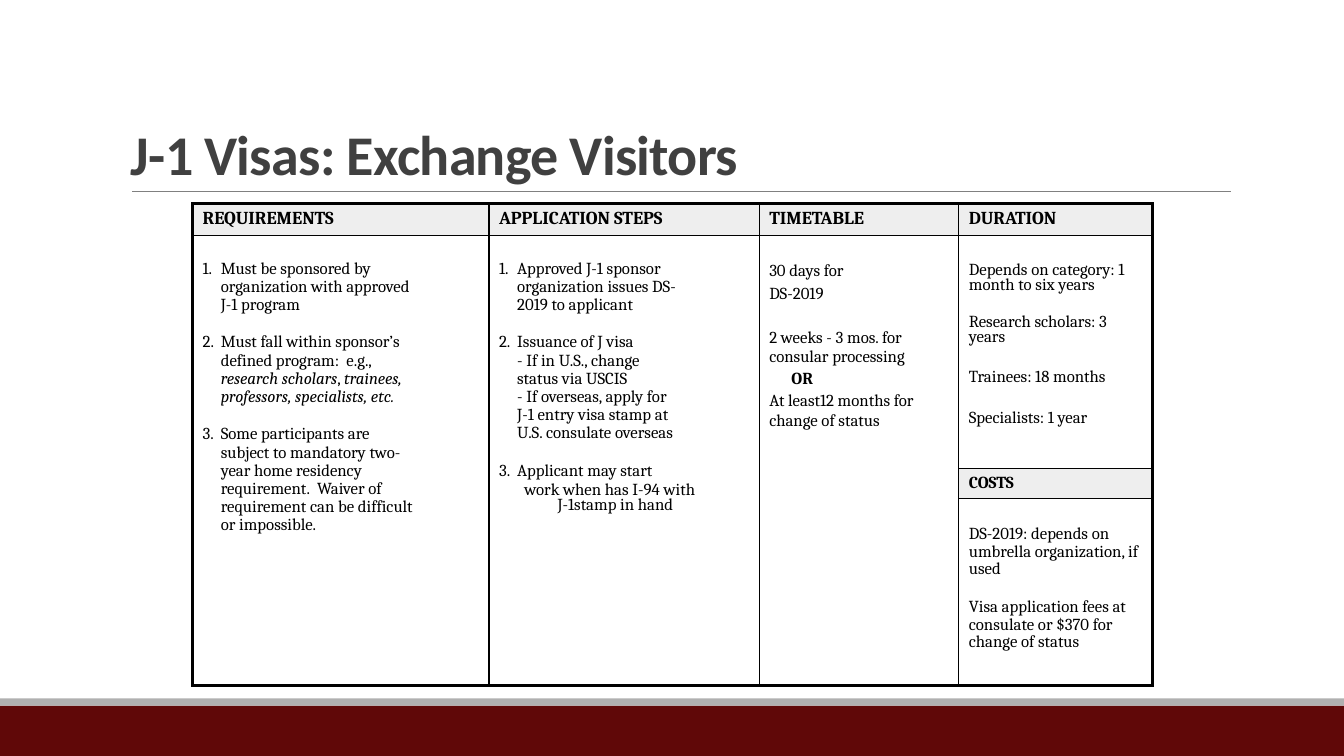
from lxml import etree
from pptx import Presentation
from pptx.dml.color import RGBColor
from pptx.enum.shapes import MSO_CONNECTOR, MSO_SHAPE
from pptx.enum.text import MSO_ANCHOR
from pptx.oxml.ns import qn
from pptx.util import Inches, Pt

MAROON = RGBColor(0x60, 0x08, 0x08)
SILVER = RGBColor(0xB0, 0xB0, 0xB0)
RULE_GRAY = RGBColor(0x80, 0x80, 0x80)
TITLE_GRAY = RGBColor(0x40, 0x40, 0x40)
HEADER_GRAY = RGBColor(0xEE, 0xEE, 0xEE)
WHITE = RGBColor(0xFF, 0xFF, 0xFF)
BLACK = RGBColor(0x00, 0x00, 0x00)

TITLE = "J-1 Visas: Exchange Visitors"
HEADERS = ["REQUIREMENTS", "APPLICATION STEPS", "TIMETABLE", "DURATION"]
COL_WIDTHS = [2.94, 2.68, 1.98, 1.92]
ROW_HEIGHTS = [0.3, 2.31, 0.3, 1.85]
THIN, THICK = 1, 2.25

# Paragraph: text or list of (text, style), then line spacing, space before (pt),
# left margin (in), first-line indent (in), numbered
STEP = (0.94, 13.7, 0.18, -0.18, True)
REQUIREMENTS = [
    ("Must be sponsored by\norganization with approved\nJ-1 program", *STEP),
    ([("Must fall within sponsor’s\ndefined program:  e.g.,\n", ""),
      ("research scholars", "i"), (", ", ""),
      ("trainees,\nprofessors, specialists, etc.", "i")], *STEP),
    ("Some participants are\nsubject to mandatory two-\nyear home residency\n"
     "requirement.  Waiver of\nrequirement can be difficult\nor impossible.", *STEP),
]
APPLICATION = [
    ("Approved J-1 sponsor\norganization issues DS-\n2019 to applicant", *STEP),
    ("Issuance of J visa\n- If in U.S., change\nstatus via USCIS\n"
     "- If overseas, apply for\nJ-1 entry visa stamp at\nU.S. consulate overseas", *STEP),
    ("Applicant may start", *STEP),
    ("work when has I-94 with J-1stamp in hand", 0.8, 2, 0.58, -0.33, False),
]
TIMETABLE = [
    ("30 days for", 1, 0, 0, 0, False),
    ("DS-2019", 1, 2, 0, 0, False),
    ("2 weeks - 3 mos. for consular processing", 1, 17.8, 0, 0, False),
    ([("OR", "b")], 1, 2, 0.22, 0, False),
    ("At least12 months for change of status", 1, 2, 0, 0, False),
]
DURATION = [
    ("Depends on category: 1 month to six years", 0.8, 0, 0, 0, False),
    ("Research scholars: 3 years", 0.8, 15, 0, 0, False),
    ("Trainees: 18 months", 0.9, 16.4, 0, 0, False),
    ("Specialists: 1 year", 0.9, 17, 0, 0, False),
]
COSTS = [
    ("DS-2019: depends on umbrella organization, if used", 0.9, 0, 0, 0, False),
    ("Visa application fees at consulate or $370 for change of status",
     0.9, 15, 0, 0, False),
]
# (row, column): paragraphs, top margin
BODY = {
    (1, 0): (REQUIREMENTS, 0.24),
    (1, 1): (APPLICATION, 0.24),
    (1, 2): (TIMETABLE, 0.26),
    (1, 3): (DURATION, 0.27),
    (3, 3): (COSTS, 0.27),
}


def add_run(p, text, font, size, color, bold=False, italic=False):
    r = p.add_run()
    r.text = text
    f = r.font
    f.name, f.size, f.bold, f.italic = font, Pt(size), bold, italic
    f.color.rgb = color
    return r


def add_bar(s, top, height, color):
    bar = s.shapes.add_shape(MSO_SHAPE.RECTANGLE, 0, Inches(top),
                             prs.slide_width, Inches(height))
    bar.shadow.inherit = False
    bar.fill.solid()
    bar.fill.fore_color.rgb = color
    bar.line.fill.background()


def fill_cell(cell, color):
    cell.fill.solid()
    cell.fill.fore_color.rgb = color


def write_header(cell, text, size):
    fill_cell(cell, HEADER_GRAY)
    add_run(cell.text_frame.paragraphs[0], text, "Cambria", size, BLACK, bold=True)


def write_body(cell, paragraphs, top):
    fill_cell(cell, WHITE)
    cell.margin_top = Inches(top)
    tf = cell.text_frame
    for i, (content, spacing, before, left, indent, numbered) in enumerate(paragraphs):
        p = tf.add_paragraph() if i else tf.paragraphs[0]
        p.line_spacing = spacing
        p.space_before = Pt(before if i else 0)
        pPr = p._p.get_or_add_pPr()
        pPr.set("marL", str(Inches(left)))
        pPr.set("indent", str(Inches(indent)))
        if numbered:
            etree.SubElement(pPr, qn("a:buFont"), typeface="Cambria")
            etree.SubElement(pPr, qn("a:buAutoNum"), type="arabicPeriod")
        runs = [(content, "")] if isinstance(content, str) else content
        for text, style in runs:
            for n, line in enumerate(text.split("\n")):
                if n:
                    p.add_line_break()
                if line:
                    add_run(p, line, "Cambria", 12, BLACK, "b" in style, "i" in style)


def set_borders(cell, widths):
    """Put black borders, {edge tag: points}, ahead of the cell's fill."""
    tcPr = cell._tc.get_or_add_tcPr()
    for i, (edge, width) in enumerate(widths.items()):
        ln = etree.Element(qn(f"a:{edge}"), w=str(Pt(width)))
        solid = etree.SubElement(ln, qn("a:solidFill"))
        etree.SubElement(solid, qn("a:srgbClr"), val=str(BLACK))
        tcPr.insert(i, ln)


prs = Presentation()
prs.slide_width, prs.slide_height = Inches(13.33), Inches(7.5)
s = prs.slides.add_slide(prs.slide_layouts[6])

add_bar(s, 7, 0.5, MAROON)
add_bar(s, 6.93, 0.07, SILVER)

rule = s.shapes.add_connector(MSO_CONNECTOR.STRAIGHT, Inches(1.31), Inches(1.9),
                              Inches(12.21), Inches(1.9))
rule.line.color.rgb = RULE_GRAY
rule.line.width = Pt(0.5)
etree.SubElement(rule._element.spPr, qn("a:effectLst"))

title = s.shapes.add_textbox(Inches(1.2), Inches(0.31), Inches(11), Inches(1.59))
tf = title.text_frame
tf.word_wrap = True
tf.vertical_anchor = MSO_ANCHOR.BOTTOM
tf.paragraphs[0].line_spacing = 0.85
r = add_run(tf.paragraphs[0], TITLE, "Calibri", 40, TITLE_GRAY, bold=True)
r.font._element.set("spc", "-50")

rows, cols = len(ROW_HEIGHTS), len(COL_WIDTHS)
table = s.shapes.add_table(rows, cols, Inches(1.91), Inches(2.02),
                           Inches(sum(COL_WIDTHS)), Inches(sum(ROW_HEIGHTS))).table
table.first_row = table.horz_banding = False
for column, width in zip(table.columns, COL_WIDTHS):
    column.width = Inches(width)
for row, height in zip(table.rows, ROW_HEIGHTS):
    row.height = Inches(height)
for c in range(cols - 1):
    table.cell(1, c).merge(table.cell(rows - 1, c))

for c, header in enumerate(HEADERS):
    write_header(table.cell(0, c), header, 13)
write_header(table.cell(2, 3), "COSTS", 12)
for (row, col), (paragraphs, top) in BODY.items():
    write_body(table.cell(row, col), paragraphs, top)

for row in range(rows):
    for col in range(cols):
        cell = table.cell(row, col)
        last = row + (cell.span_height if cell.is_merge_origin else 1) == rows
        widths = {"lnL": THIN if col else THICK,
                  "lnR": THIN if col < cols - 1 else THICK}
        if not cell.is_spanned:
            widths["lnT"] = THIN if row else THICK
        if last or not cell.is_spanned:
            widths["lnB"] = THICK if last else THIN
        set_borders(cell, widths)

prs.save("out.pptx")
